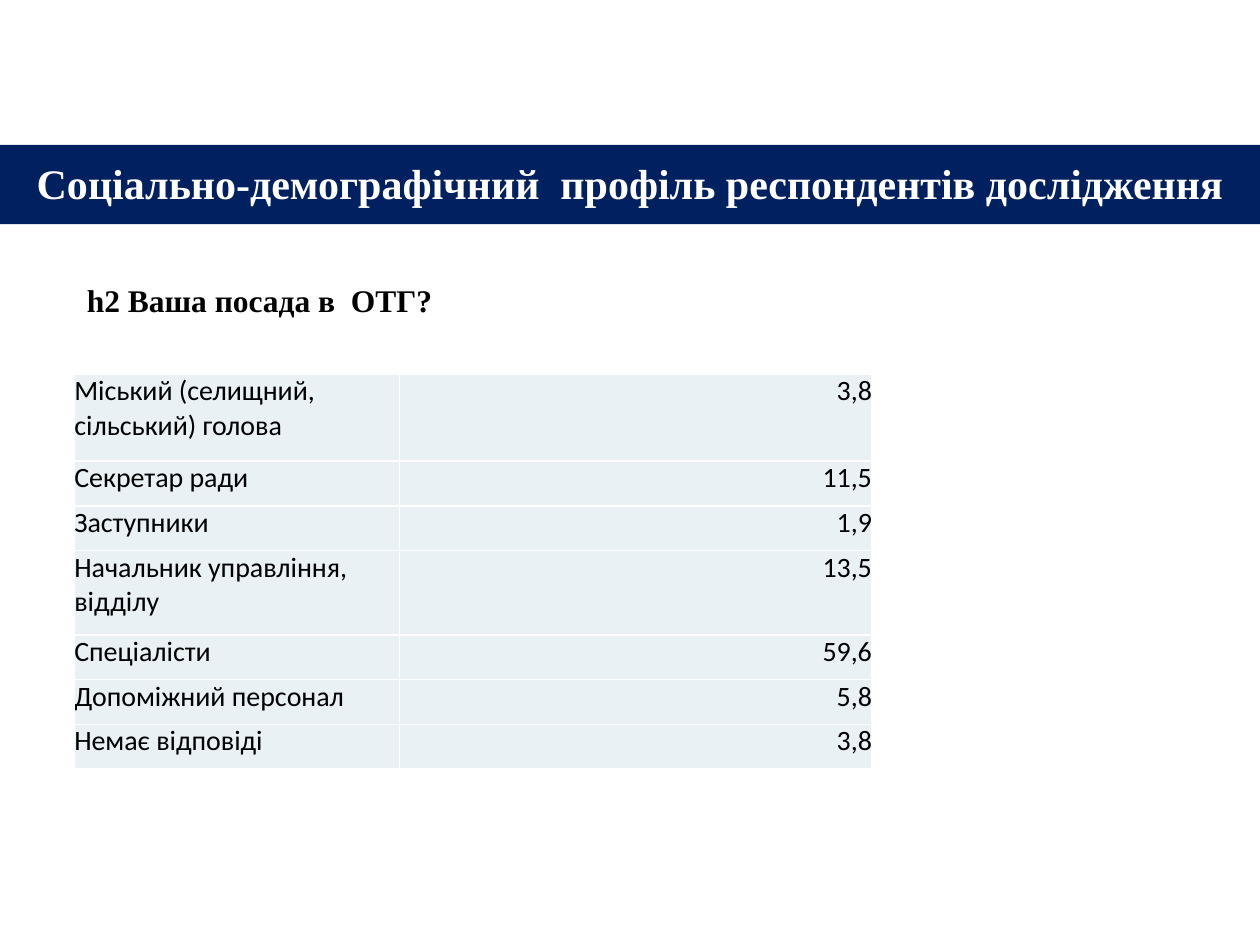
"""Build a slide with a title band, a survey question and a table of answers."""
import pptx
import pptx.dml.color
import pptx.enum.text
import pptx.util

W, H = 10, 7.5
LEFT = 0.059 * W
COLORS = {"band": "002060", "title": "FFFFFF", "text": "000000", "cell": "E9F1F5"}
ALIGN = pptx.enum.text.PP_ALIGN
ANCHOR = pptx.enum.text.MSO_ANCHOR
HEADING = {"name": "Times New Roman", "bold": True}
BODY = {"name": "Calibri", "bold": False, "size": pptx.util.Pt(16)}
COL_WIDTHS = (2.58, 3.75)
LINE_HEIGHT = 0.355
ROWS = [
    ("Міський (селищний, сільський) голова", "3,8", 0.69),
    ("Секретар ради", "11,5", LINE_HEIGHT),
    ("Заступники", "1,9", LINE_HEIGHT),
    ("Начальник управління, відділу", "13,5", 0.67),
    ("Спеціалісти", "59,6", LINE_HEIGHT),
    ("Допоміжний персонал", "5,8", LINE_HEIGHT),
    ("Немає відповіді", "3,8", LINE_HEIGHT),
]


def rgb(key):
    return pptx.dml.color.RGBColor.from_string(COLORS[key])


def inches(*lengths):
    return [pptx.util.Inches(n) for n in lengths]


def apply(obj, values):
    for name, value in values.items():
        setattr(obj, name, value)


def fill(obj, key):
    obj.fill.solid()
    obj.fill.fore_color.rgb = rgb(key)


def write(tf, text, font, color="text", align=ALIGN.LEFT):
    p = tf.paragraphs[0]
    p.alignment = align
    r = p.add_run()
    r.text = text
    apply(r.font, font)
    r.font.color.rgb = rgb(color)


def add_title(s, text):
    sp = s.shapes.title
    box = inches(0, 1.15, W, 0.63)
    apply(sp, dict(zip(("left", "top", "width", "height"), box)))
    fill(sp, "band")
    apply(sp.text_frame, {
        "word_wrap": True,
        "auto_size": pptx.enum.text.MSO_AUTO_SIZE.NONE,
        "vertical_anchor": ANCHOR.TOP,
        "margin_top": pptx.util.Inches(0.1),
    })
    font = {**HEADING, "size": pptx.util.Pt(24)}
    write(sp.text_frame, text, font, "title", ALIGN.CENTER)


def add_question(s, text):
    sp = s.shapes.add_textbox(*inches(LEFT, 2.18, 8.35, 2.22))
    sp.text_frame.word_wrap = True
    write(sp.text_frame, text, {**HEADING, "size": pptx.util.Pt(18)})


def add_answers(s, rows):
    height = sum(row[-1] for row in rows)
    box = inches(LEFT, 2.97, sum(COL_WIDTHS), height)
    table = s.shapes.add_table(len(rows), len(COL_WIDTHS), *box).table
    apply(table, {"first_row": False, "horz_banding": False})
    for column, width in zip(table.columns, inches(*COL_WIDTHS)):
        column.width = width
    margins = dict.fromkeys(
        ("margin_left", "margin_top", "margin_right", "margin_bottom"), 0)
    for row, (label, value, row_height) in zip(table.rows, rows):
        row.height = pptx.util.Inches(row_height)
        texts = ((label, ALIGN.LEFT), (value, ALIGN.RIGHT))
        for cell, (text, align) in zip(row.cells, texts):
            apply(cell, {**margins, "vertical_anchor": ANCHOR.TOP})
            fill(cell, "cell")
            write(cell.text_frame, text, BODY, align=align)


def main():
    prs = pptx.Presentation()
    prs.slide_width, prs.slide_height = inches(W, H)
    s = prs.slides.add_slide(prs.slide_layouts[5])
    add_title(s, "Соціально-демографічний  профіль респондентів дослідження")
    add_question(s, "h2 Ваша посада в  ОТГ?")
    add_answers(s, ROWS)
    prs.save("out.pptx")


if __name__ == "__main__":
    main()
